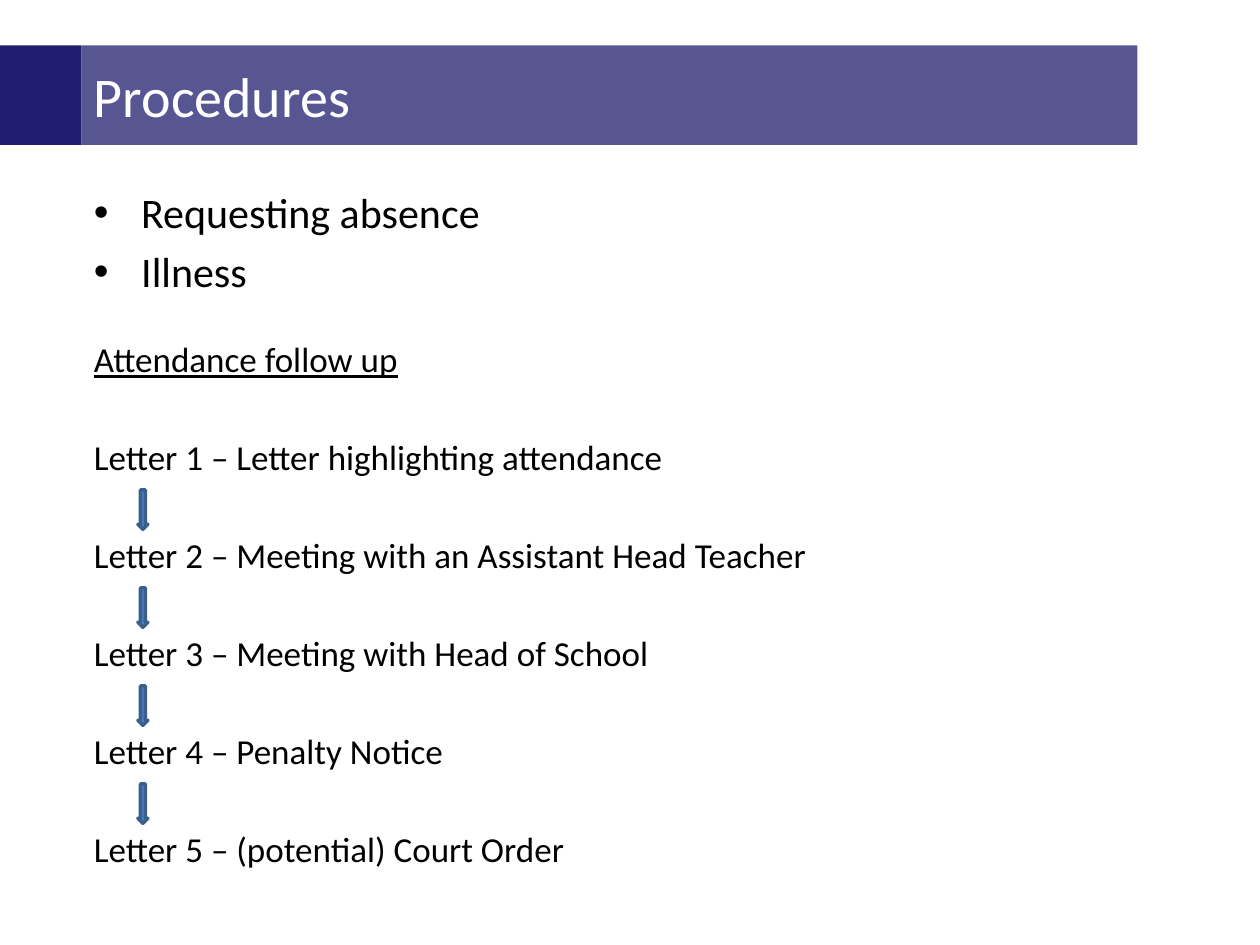
"""Build the attendance procedures slide."""
import pptx
import pptx.dml.color
import pptx.enum.shapes
import pptx.enum.text
import pptx.oxml
import pptx.oxml.ns
import pptx.util

Pt = pptx.util.Pt
RGBColor = pptx.dml.color.RGBColor
MSO_SHAPE = pptx.enum.shapes.MSO_SHAPE

NAVY = RGBColor(0x21, 0x1D, 0x70)
BLUE = RGBColor(0x4F, 0x81, 0xBD)
DARK_BLUE = RGBColor(0x3A, 0x5F, 0x8C)
BLACK = RGBColor(0, 0, 0)
WHITE = RGBColor(255, 255, 255)
FONT = "Calibri"

TITLE = "Procedures"
TOPICS = ["Requesting absence", "Illness"]
HEADING = "Attendance follow up"
LETTERS = [
    "Letter highlighting attendance",
    "Meeting with an Assistant Head Teacher",
    "Meeting with Head of School",
    "Penalty Notice",
    "(potential) Court Order",
]

BAND_TOP, BAND_HEIGHT = 26, 56.9
ACCENT_WIDTH, TITLE_WIDTH = 46.5, 603.4
FIRST_ARROW_TOP, LETTER_PITCH = 280, 56


def place(shape, left, top, width, height):
    shape.left, shape.top = Pt(left), Pt(top)
    shape.width, shape.height = Pt(width), Pt(height)


def paint(shape, color):
    shape.fill.solid()
    shape.fill.fore_color.rgb = color


def style(paragraph, size, color, underline=None):
    for run in paragraph.runs:
        run.font.name = FONT
        run.font.size = Pt(size)
        run.font.color.rgb = color
        run.font.underline = underline


def remove_bullet(paragraph):
    properties = paragraph._p.get_or_add_pPr()
    properties.set("marL", "0")
    properties.set("indent", "0")
    properties.append(pptx.oxml.parse_xml(
        f"<a:buNone {pptx.oxml.ns.nsdecls('a')}/>"))


def add_block(slide, kind, color, *box):
    block = slide.shapes.add_shape(kind, *(Pt(length) for length in box))
    block.shadow.inherit = False
    paint(block, color)
    block.line.fill.background()
    return block


def fill_title(title):
    place(title, ACCENT_WIDTH, BAND_TOP, TITLE_WIDTH, BAND_HEIGHT)
    paint(title, NAVY)
    tint = title._element.spPr.find(".//" + pptx.oxml.ns.qn("a:srgbClr"))
    tint.append(pptx.oxml.parse_xml(
        f"<a:alpha {pptx.oxml.ns.nsdecls('a')} val='75000'/>"))
    title.text_frame.text = TITLE
    title.text_frame.auto_size = pptx.enum.text.MSO_AUTO_SIZE.NONE
    title.text_frame.vertical_anchor = pptx.enum.text.MSO_ANCHOR.MIDDLE
    title.text_frame.paragraphs[0].alignment = pptx.enum.text.PP_ALIGN.LEFT
    style(title.text_frame.paragraphs[0], 32, WHITE)


def fill_body(body):
    place(body, ACCENT_WIDTH, 103, 637.2, 421.9)
    steps = [f"Letter {n} – {step}" for n, step in enumerate(LETTERS, 1)]
    body.text_frame.text = "\n".join(TOPICS + [HEADING] + steps)
    body.text_frame.auto_size = pptx.enum.text.MSO_AUTO_SIZE.NONE
    for position, paragraph in enumerate(body.text_frame.paragraphs):
        if position < len(TOPICS):
            paragraph.space_before = Pt(4.8)
            style(paragraph, 24, BLACK)
            continue
        is_heading = position == len(TOPICS)
        paragraph.space_before = Pt(24 if is_heading else 32)
        remove_bullet(paragraph)
        style(paragraph, 20, BLACK, is_heading)


def main():
    deck = pptx.Presentation()
    deck.slide_width, deck.slide_height = Pt(720), Pt(540)
    slide = deck.slides.add_slide(deck.slide_layouts[1])
    fill_title(slide.shapes.title)
    fill_body(slide.placeholders[1])
    add_block(slide, MSO_SHAPE.RECTANGLE, NAVY,
              0, BAND_TOP, ACCENT_WIDTH, BAND_HEIGHT)
    for gap in range(len(LETTERS) - 1):
        top = FIRST_ARROW_TOP + gap * LETTER_PITCH
        arrow = add_block(slide, MSO_SHAPE.DOWN_ARROW, BLUE, 78.8, top, 5.7, 22.5)
        arrow.line.color.rgb = DARK_BLUE
        arrow.line.width = Pt(2)
    deck.save("out.pptx")


if __name__ == "__main__":
    main()
